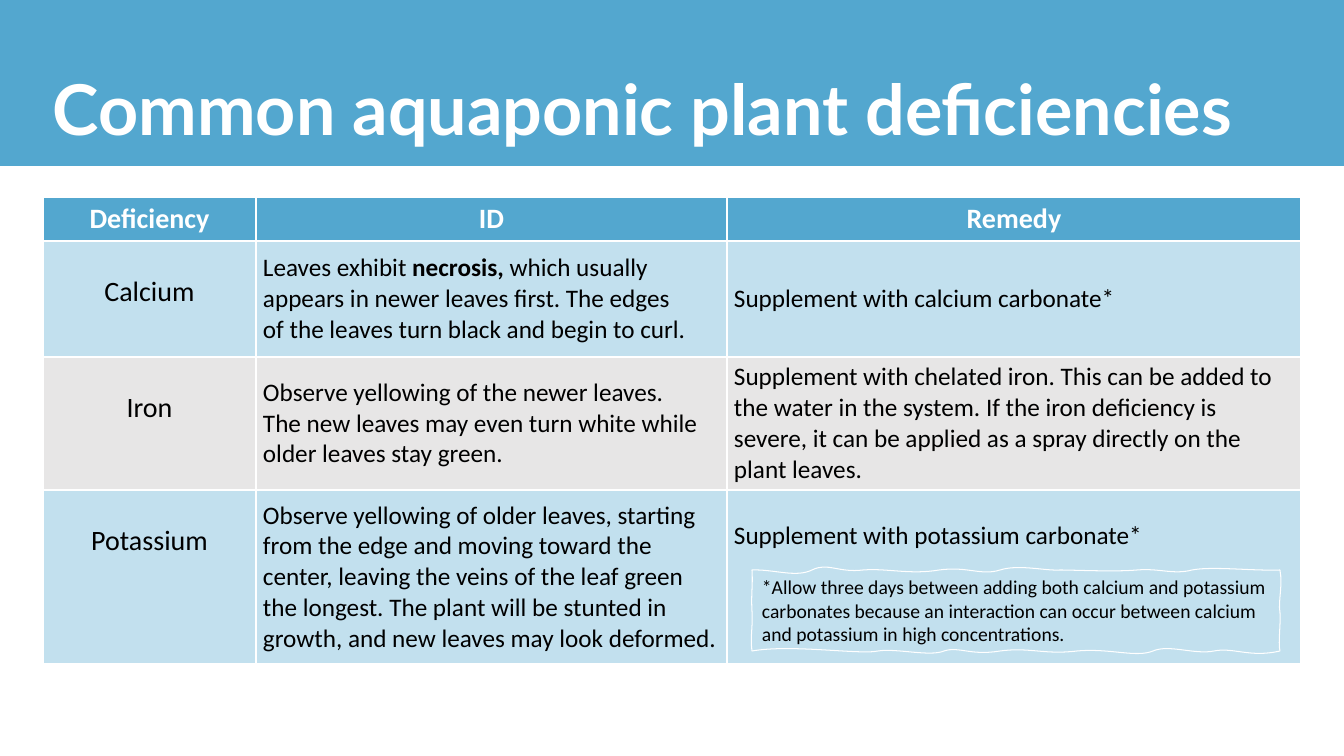
from dataclasses import dataclass

from lxml import etree
from pptx import Presentation
from pptx.dml.color import RGBColor
from pptx.enum.shapes import MSO_SHAPE
from pptx.enum.text import MSO_ANCHOR, PP_ALIGN
from pptx.oxml.ns import qn
from pptx.util import Pt

RECTANGLE = MSO_SHAPE.RECTANGLE
TOP, MIDDLE = MSO_ANCHOR.TOP, MSO_ANCHOR.MIDDLE
LEFT, CENTER = PP_ALIGN.LEFT, PP_ALIGN.CENTER
EMU_PER_PX = 914400 / 100.8


@dataclass(frozen=True)
class Theme:
    blue: str = "53A7CF"
    gray: str = "E7E6E6"
    white: str = "FFFFFF"
    black: str = "000000"
    title_font: str = "Lato"
    body_font: str = "Calibri"
    title_size: int = 50
    label_size: int = 20
    body_size: int = 18
    note_size: int = 14
    tint: int = 35


THEME = Theme()
COLUMN_WIDTHS = [213, 471, 574]
ROW_HEIGHTS = [44, 116, 133, 174]
HEADINGS = ["Deficiency", "ID", "Remedy"]
DEFICIENCIES = [
    ("Calcium",
     "Leaves exhibit **necrosis,** which usually appears in newer leaves first. The edges \n"
     "of the leaves turn black and begin to curl.",
     "Supplement with calcium carbonate*"),
    ("Iron",
     "Observe yellowing of the newer leaves. \n"
     "The new leaves may even turn white while older leaves stay green.",
     "Supplement with chelated iron. This can be added to the water in the system. "
     "If the iron deficiency is severe, it can be applied as a spray directly on the plant leaves."),
    ("Potassium",
     "Observe yellowing of older leaves, starting from the edge and moving toward the center, "
     "leaving the veins of the leaf green the longest. The plant will be stunted in growth, "
     "and new leaves may look deformed.",
     "Supplement with potassium carbonate*"),
]
NOTE = ("*Allow three days between adding both calcium and potassium carbonates because an "
        "interaction can occur between calcium and potassium in high concentrations.")
NOTE_START = (752, 570)
NOTE_CURVES = [
    ((773, 569), (796, 578), (812, 570)),
    ((828, 562), (838, 573), (863, 570)),
    ((887, 568), (910, 575), (939, 570)),
    ((968, 566), (981, 576), (1000, 570)),
    ((1019, 564), (1045, 571), (1060, 570)),
    ((1076, 570), (1114, 572), (1137, 570)),
    ((1160, 568), (1173, 575), (1192, 570)),
    ((1212, 566), (1252, 571), (1280, 570)),
    ((1283, 585), (1278, 602), (1280, 612)),
    ((1281, 623), (1278, 642), (1280, 651)),
    ((1250, 658), (1233, 647), (1214, 651)),
    ((1195, 655), (1169, 644), (1153, 651)),
    ((1136, 658), (1110, 648), (1077, 651)),
    ((1044, 655), (1030, 647), (1000, 651)),
    ((970, 656), (959, 646), (944, 651)),
    ((930, 657), (896, 648), (878, 651)),
    ((860, 655), (792, 644), (752, 651)),
    ((750, 636), (753, 629), (752, 611)),
    ((751, 592), (753, 587), (752, 570)),
]


def px(length):
    return round(length * EMU_PER_PX)


def color(code):
    return RGBColor.from_string(code)


def style_font(font, name, size, code, bold=False):
    font.name = name
    font.size = Pt(size)
    font.color.rgb = color(code)
    font.bold = bold


def write_cell(cell, text, size, code, align, bold=False):
    para = cell.text_frame.paragraphs[0]
    para.alignment = align
    for number, line in enumerate(text.split("\n")):
        if number:
            para.add_line_break()
        for index, part in enumerate(line.split("**")):
            span = para.add_run()
            span.text = part
            style_font(span.font, THEME.body_font, size, code, bold or index % 2 == 1)


def set_margins(cell, anchor, top=0):
    cell.vertical_anchor = anchor
    cell.margin_left = cell.margin_right = px(7)
    cell.margin_top, cell.margin_bottom = px(top), 0


def fill_cell(cell, code, opacity=100):
    cell.fill.solid()
    cell.fill.fore_color.rgb = color(code)
    if opacity < 100:
        fill = cell._tc.tcPr.find(qn("a:solidFill"))
        etree.SubElement(fill[0], qn("a:alpha"), val=str(opacity * 1000))


def add_band(page):
    band = page.shapes.add_shape(RECTANGLE, 0, 0, px(1344), px(166))
    band.shadow.inherit = False
    band.fill.solid()
    band.fill.fore_color.rgb = color(THEME.blue)
    band.line.fill.background()


def add_title(page, text):
    box = page.shapes.add_textbox(px(43), px(40), px(1209), px(146))
    frame = box.text_frame
    frame.word_wrap = True
    frame.vertical_anchor = MIDDLE
    frame.text = text
    para = frame.paragraphs[0]
    para.line_spacing = 0.9
    style_font(para.runs[0].font, THEME.title_font, THEME.title_size, THEME.white, True)


def add_deficiency_table(page):
    frame = page.shapes.add_table(len(ROW_HEIGHTS), len(COLUMN_WIDTHS), px(43), px(197),
                                  px(sum(COLUMN_WIDTHS)), px(sum(ROW_HEIGHTS)))
    table = frame.table
    for column, width in zip(table.columns, COLUMN_WIDTHS):
        column.width = px(width)
    for row, height in zip(table.rows, ROW_HEIGHTS):
        row.height = px(height)
    for cell, heading in zip(table.rows[0].cells, HEADINGS):
        set_margins(cell, MIDDLE)
        fill_cell(cell, THEME.blue)
        write_cell(cell, heading, THEME.label_size, THEME.white, CENTER, True)
    for row, texts in enumerate(DEFICIENCIES, 1):
        for column, text in enumerate(texts):
            cell = table.cell(row, column)
            set_margins(cell, MIDDLE)
            if row % 2:
                fill_cell(cell, THEME.blue, THEME.tint)
            else:
                fill_cell(cell, THEME.gray)
            size, align = (THEME.body_size, LEFT) if column else (THEME.label_size, CENTER)
            write_cell(cell, text, size, THEME.black, align)
        set_margins(table.cell(row, 0), TOP, 34)
    set_margins(table.cell(3, 2), TOP, 31)


def bend_sides(shape, start, curves):
    sides = list(shape._element.iter(qn("a:lnTo")))
    for side, curve in zip(sides, curves):
        bend = etree.Element(qn("a:cubicBezTo"))
        for x, y in curve:
            etree.SubElement(bend, qn("a:pt"), x=str(px(x - start[0])), y=str(px(y - start[1])))
        side.getparent().replace(side, bend)


def add_note(page, text):
    builder = page.shapes.build_freeform(*NOTE_START, scale=EMU_PER_PX)
    builder = page.shapes.build_freeform(px(NOTE_START[0]), px(NOTE_START[1]))
    builder.add_line_segments([(px(x), px(y)) for _, _, (x, y) in NOTE_CURVES], close=True)
    note = builder.convert_to_shape()
    bend_sides(note, NOTE_START, NOTE_CURVES)
    note.shadow.inherit = False
    note.fill.background()
    note.line.color.rgb = color(THEME.white)
    frame = note.text_frame
    frame.word_wrap = True
    frame.vertical_anchor = TOP
    frame.text = text
    para = frame.paragraphs[0]
    para.alignment = LEFT
    style_font(para.runs[0].font, THEME.body_font, THEME.note_size, THEME.black)


def main():
    deck = Presentation()
    deck.slide_width, deck.slide_height = px(1344), px(756)
    page = deck.slides.add_slide(deck.slide_layouts[6])
    add_band(page)
    add_title(page, "Common aquaponic plant deficiencies")
    add_deficiency_table(page)
    add_note(page, NOTE)
    deck.save("out.pptx")


if __name__ == "__main__":
    main()
